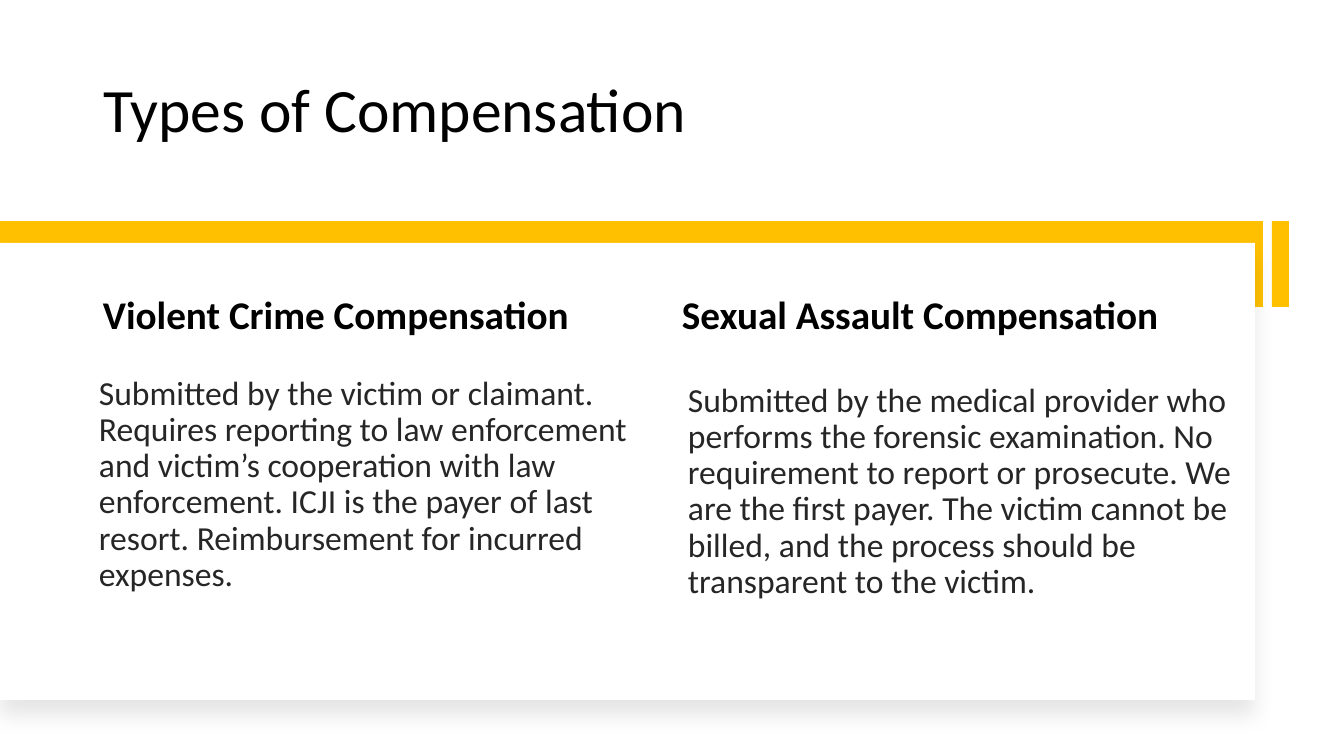
from lxml import etree
from pptx import Presentation
from pptx import util as u
from pptx.dml.color import RGBColor
from pptx.enum import shapes, text
from pptx.oxml import ns

PX = 914400 / 100.8
FONT = "Calibri"
BLACK, GREY, GOLD, WHITE = "000000", "262626", "FFC000", "FFFFFF"


def px(n):
    return u.Emu(round(n * PX))


def rgb(color):
    return RGBColor.from_string(color)


class Deck:
    def __init__(self, width, height):
        self.prs = Presentation()
        self.prs.slide_width, self.prs.slide_height = px(width), px(height)
        self.s = self.prs.slides.add_slide(self.prs.slide_layouts[5])

    def set_text(self, sp, content, size, color, bold=False, anchor=text.MSO_ANCHOR.TOP):
        tf = sp.text_frame
        tf.word_wrap = True
        tf.auto_size = text.MSO_AUTO_SIZE.NONE
        tf.vertical_anchor = anchor
        p = tf.paragraphs[0]
        p.text = content
        p.alignment = text.PP_ALIGN.LEFT
        p.line_spacing = 0.9
        p.font.name, p.font.size, p.font.bold = FONT, u.Pt(size), bold
        p.font.color.rgb = rgb(color)

    def title(self, x, y, w, h, content):
        sp = self.s.shapes.title
        sp.left, sp.top, sp.width, sp.height = map(px, (x, y, w, h))
        self.set_text(sp, content, 44, BLACK, anchor=text.MSO_ANCHOR.MIDDLE)

    def textbox(self, x, y, w, h, content, size, color, bold=False):
        sp = self.s.shapes.add_textbox(*map(px, (x, y, w, h)))
        self.set_text(sp, content, size, color, bold)

    def rect(self, x, y, w, h, color):
        sp = self.s.shapes.add_shape(shapes.MSO_SHAPE.RECTANGLE, *map(px, (x, y, w, h)))
        sp.shadow.inherit = False
        sp.fill.solid()
        sp.fill.fore_color.rgb = rgb(color)
        sp.line.fill.background()
        return sp

    def card(self, x, y, w, h):
        sp = self.rect(x, y, w, h, WHITE)
        effects = sp._element.spPr.find(ns.qn("a:effectLst"))
        shadow = etree.SubElement(effects, ns.qn("a:outerShdw"), blurRad=str(u.Pt(15)),
                                  dist=str(u.Pt(11)), dir="5400000", algn="t", rotWithShape="0")
        tint = etree.SubElement(shadow, ns.qn("a:srgbClr"), val=BLACK)
        etree.SubElement(tint, ns.qn("a:alpha"), val="10000")


COLUMNS = [
    (93, 291, "Violent Crime Compensation", 89, 371,
     "Submitted by the victim or claimant. Requires reporting to law enforcement and "
     "victim’s cooperation with law enforcement. ICJI is the payer of last resort. "
     "Reimbursement for incurred expenses."),
    (672, 291, "Sexual Assault Compensation", 678, 378,
     "Submitted by the medical provider who performs the forensic examination. No "
     "requirement to report or prosecute. We are the first payer. The victim cannot be "
     "billed, and the process should be transparent to the victim."),
]


def main():
    deck = Deck(1344, 756)
    deck.rect(1272, 221, 17, 86, GOLD)
    deck.rect(0, 221, 1263, 86, GOLD)
    deck.card(0, 243, 1255, 457)
    deck.title(93, 40, 1159, 146, "Types of Compensation")
    for head_x, head_y, heading, body_x, body_y, body in COLUMNS:
        deck.textbox(head_x, head_y, 570, 91, heading, 28, BLACK, bold=True)
        deck.textbox(body_x, body_y, 570, 406, body, 24, GREY)
    deck.prs.save("out.pptx")


if __name__ == "__main__":
    main()
